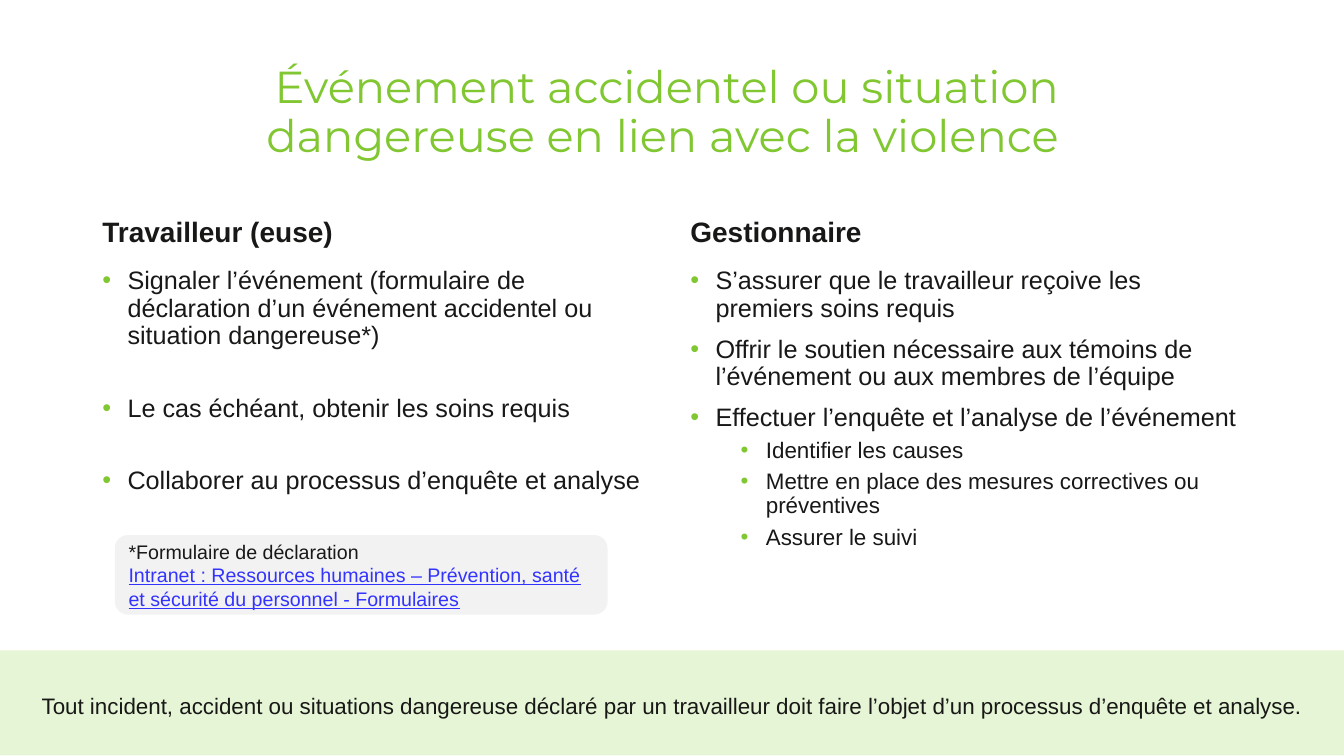
from lxml.etree import SubElement
from pptx import Presentation
from pptx.dml.color import RGBColor
from pptx.enum.shapes import MSO_SHAPE
from pptx.enum.text import MSO_ANCHOR, MSO_AUTO_SIZE, PP_ALIGN
from pptx.oxml.ns import qn
from pptx.util import Pt

COLORS = {"green": "81C731", "text": "181817", "link": "3333FF",
          "band": "E6F5D5", "note": "F2F2F2"}


def add_text(tf, text, size=18, color="text", font="Arial", bold=False,
             underline=False, align=PP_ALIGN.LEFT, line=0.9, before=0,
             level=None):
    """Fill the first paragraph if it is empty, else append one; level adds a bullet."""
    p = tf.paragraphs[0] if not tf.text else tf.add_paragraph()
    p.alignment = align
    p.line_spacing = line
    p.space_before = Pt(before)
    if level is not None:
        p.level = level
        pPr = p._p.get_or_add_pPr()
        pPr.set("marL", str(Pt(18 + 36 * level)))
        pPr.set("indent", str(Pt(-18)))
        clr = SubElement(pPr, qn("a:buClr"))
        SubElement(clr, qn("a:srgbClr"), val=COLORS["green"])
        SubElement(pPr, qn("a:buFont"), typeface="Arial")
        SubElement(pPr, qn("a:buChar"), char="•")
    r = p.add_run()
    r.text = text
    r.font.name = font
    r.font.size = Pt(size)
    r.font.bold = bold
    r.font.underline = underline
    r.font.color.rgb = RGBColor.from_string(COLORS[color])


def add_panel(s, kind, fill, left, top, width, height):
    sp = s.shapes.add_shape(kind, Pt(left), Pt(top), Pt(width), Pt(height))
    sp.shadow.inherit = False
    sp.fill.solid()
    sp.fill.fore_color.rgb = RGBColor.from_string(COLORS[fill])
    sp.line.fill.background()
    tf = sp.text_frame
    tf.word_wrap = True
    tf.vertical_anchor = MSO_ANCHOR.MIDDLE
    return tf


prs = Presentation()
prs.slide_width, prs.slide_height = Pt(960), Pt(540)
s = prs.slides.add_slide(prs.slide_layouts[5])

# Title
title = s.shapes.title
title.left, title.top, title.width, title.height = Pt(66), Pt(28.8), Pt(698), Pt(104.4)
tf = title.text_frame
tf.word_wrap = True
tf.auto_size = MSO_AUTO_SIZE.NONE
tf.vertical_anchor = MSO_ANCHOR.MIDDLE
add_text(tf, "Événement accidentel ou situation dangereuse en lien avec la violence",
         size=32, color="green", font="Montserrat", align=PP_ALIGN.RIGHT)

# Two columns: left edge, width, heading, gap between main points, (level, text)
columns = [
    (66, 406, "Travailleur (euse)", 32.5, [
        (0, "Signaler l’événement (formulaire de déclaration d’un événement "
            "accidentel ou situation dangereuse*)"),
        (0, "Le cas échéant, obtenir les soins requis"),
        (0, "Collaborer au processus d’enquête et analyse"),
    ]),
    (486, 408, "Gestionnaire", 10, [
        (0, "S’assurer que le travailleur reçoive les premiers soins requis"),
        (0, "Offrir le soutien nécessaire aux témoins de l’événement ou aux "
            "membres de l’équipe"),
        (0, "Effectuer l’enquête et l’analyse de l’événement"),
        (1, "Identifier les causes"),
        (1, "Mettre en place des mesures correctives ou préventives"),
        (1, "Assurer le suivi"),
    ]),
]
for left, width, heading, gap, points in columns:
    head = s.shapes.add_textbox(Pt(left), Pt(116.6), Pt(width), Pt(64.8)).text_frame
    head.word_wrap = True
    head.vertical_anchor = MSO_ANCHOR.BOTTOM
    add_text(head, heading, size=20, bold=True)

    body = s.shapes.add_textbox(Pt(left), Pt(188), Pt(width), Pt(270)).text_frame
    body.word_wrap = True
    for i, (level, text) in enumerate(points):
        before = 0 if i == 0 else 5 if level else gap
        add_text(body, text, size=16 if level else 18, before=before, level=level)

# Closing band
band = add_panel(s, MSO_SHAPE.RECTANGLE, "band", 0, 464.6, 960, 75)
add_text(band, "Tout incident, accident ou situations dangereuse déclaré par un "
         "travailleur doit faire l’objet d’un processus d’enquête et analyse.",
         size=16, align=PP_ALIGN.CENTER, line=1.2)

# Note on the form
note = add_panel(s, MSO_SHAPE.ROUNDED_RECTANGLE, "note", 82, 382.2, 352, 56.8)
add_text(note, "*Formulaire de déclaration", size=14, line=1.0)
add_text(note, "Intranet : Ressources humaines – Prévention, santé et sécurité du "
         "personnel - Formulaires", size=14, color="link", underline=True, line=1.0)

prs.save("out.pptx")
